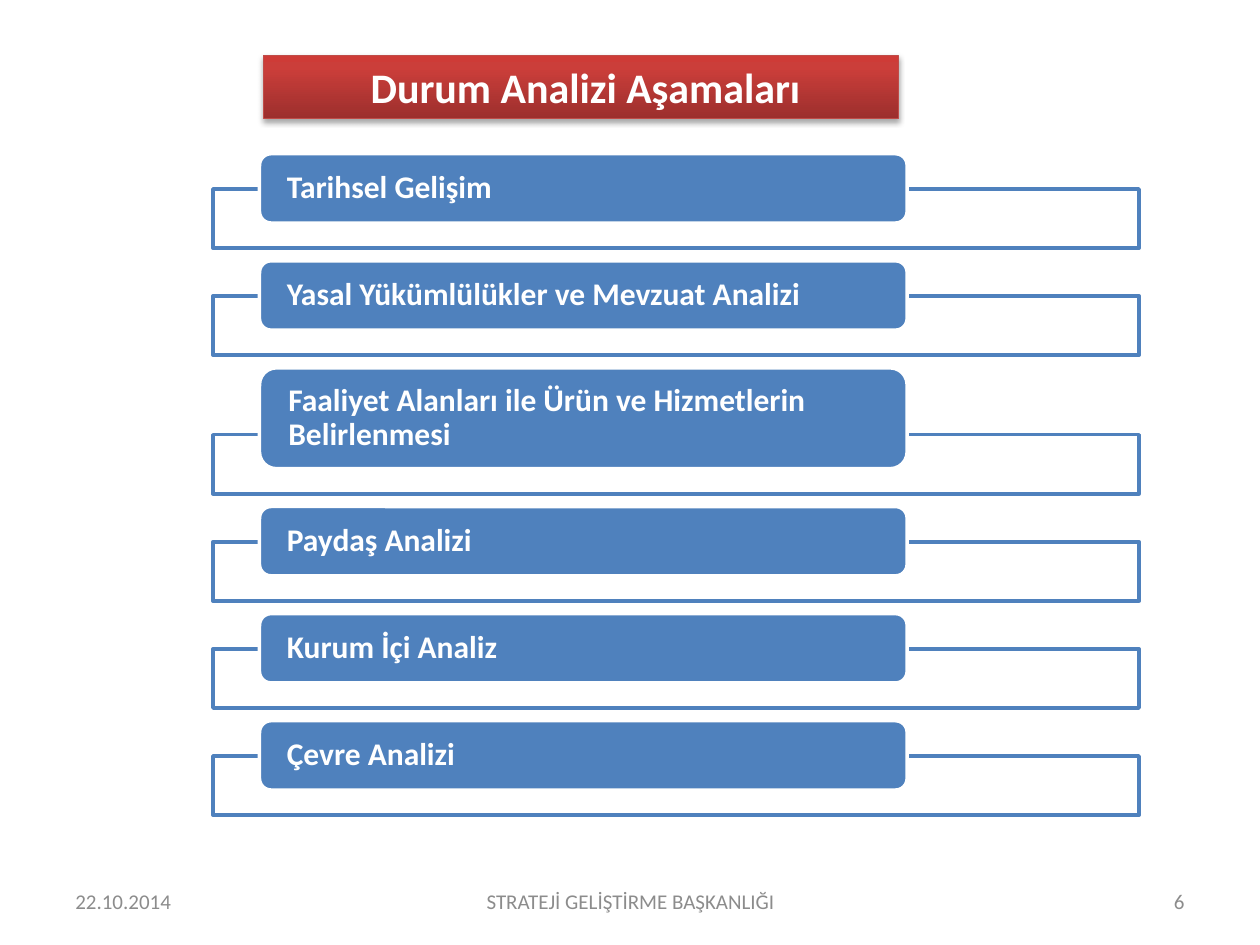
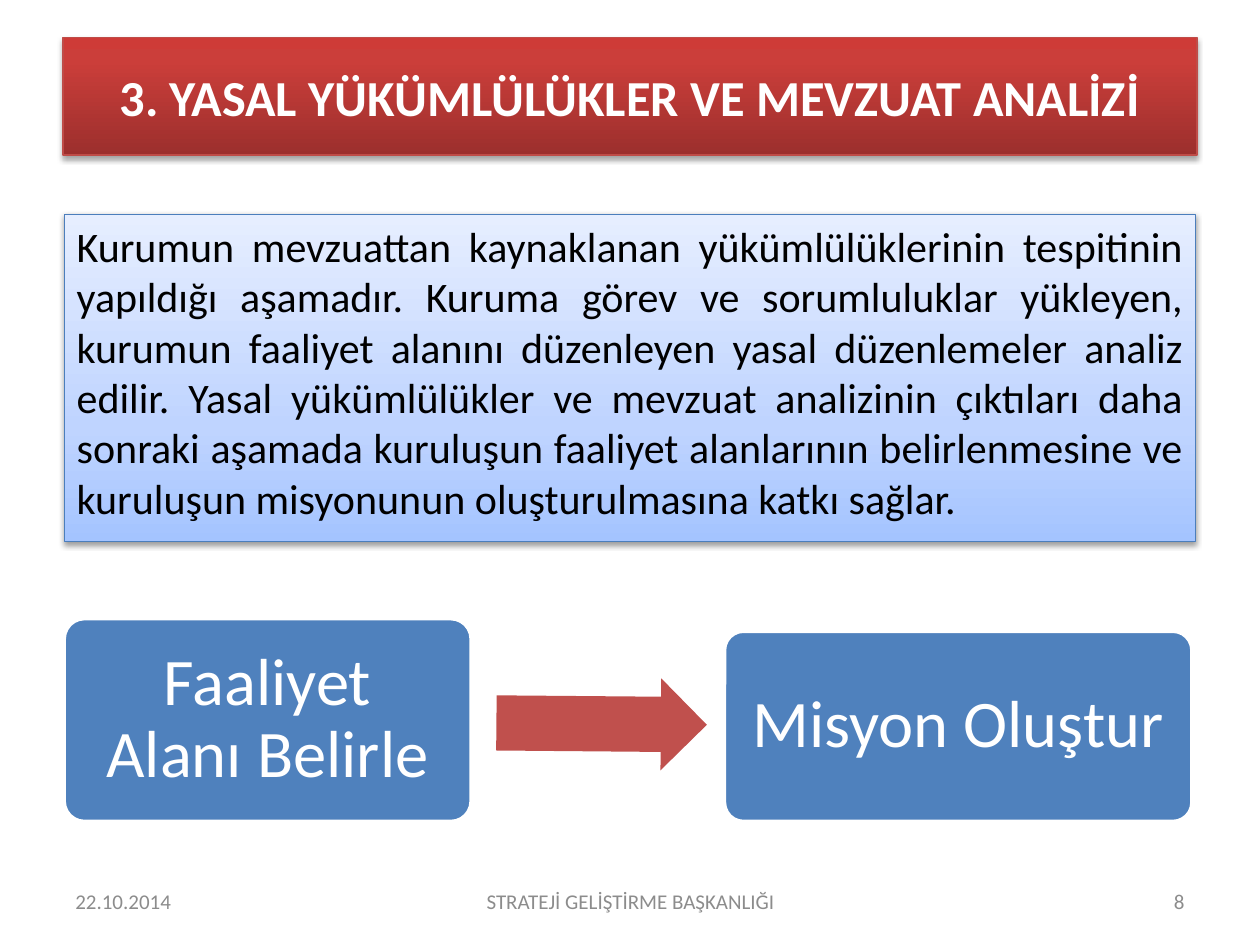
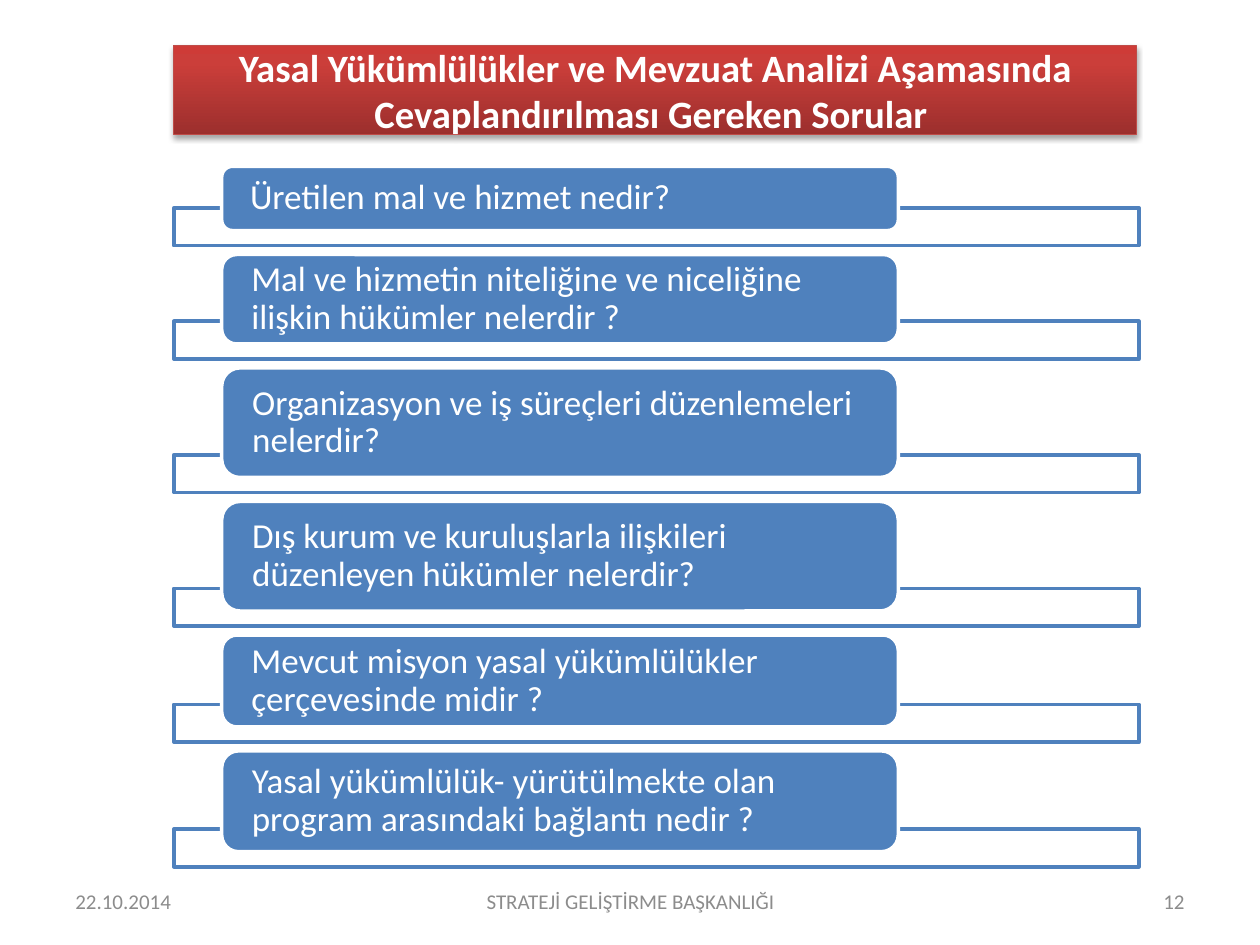
import pptx
import pptx.util
import pptx.dml.color
import pptx.enum.shapes
import pptx.enum.text
import pptx.oxml.ns
import lxml.etree

Inches = pptx.util.Inches
Kind = pptx.enum.shapes.MSO_SHAPE
Align = pptx.enum.text.PP_ALIGN
Anchor = pptx.enum.text.MSO_ANCHOR
qn = pptx.oxml.ns.qn

BLUE, RED, WHITE, BLACK, GRAY = "4F81BD", "C0504D", "FFFFFF", "000000", "8C8C8C"
BAND = [(0, "9C2F2D"), (80, "CB3E3A"), (100, "CE3B37")]
PANEL = [(0, "A4C4FF"), (35, "BFD4FF"), (100, "E6EEFF")]
DATE = "22.10.2014"
OFFICE = "STRATEJİ GELİŞTİRME BAŞKANLIĞI"


def color(code):
    return pptx.dml.color.RGBColor.from_string(code)


def child(parent, tag, **attrs):
    return lxml.etree.SubElement(parent, qn(tag), {k: str(v) for k, v in attrs.items()})


class Deck:
    font = "Calibri"

    def __init__(self):
        self.show = pptx.Presentation()
        self.show.slide_width = Inches(10)
        self.show.slide_height = Inches(7.5)

    def start(self, number):
        self.slide = self.show.slides.add_slide(self.show.slide_layouts[6])
        self.label(DATE, 0.5, 2.33, Align.LEFT)
        self.label(OFFICE, 3.42, 3.17, Align.CENTER)
        self.label(str(number), 7.17, 2.33, Align.RIGHT)

    def letter(self, shape, text, size, code=WHITE, bold=False, align=Align.LEFT,
               anchor=Anchor.MIDDLE, inset=(0.1, 0.05), space=1.0):
        frame = shape.text_frame
        frame.text = text
        frame.word_wrap = True
        frame.vertical_anchor = anchor
        frame.margin_left = frame.margin_right = Inches(inset[0])
        frame.margin_top = frame.margin_bottom = Inches(inset[1])
        para = frame.paragraphs[0]
        para.alignment = align
        para.line_spacing = space
        font = para.runs[0].font
        font.name = self.font
        font.size = pptx.util.Pt(size)
        font.bold = bold
        font.color.rgb = color(code)

    def label(self, text, left, width, align):
        box = self.slide.shapes.add_textbox(
            Inches(left), Inches(6.95), Inches(width), Inches(0.4))
        self.letter(box, text, 12, GRAY, align=align)

    def shape(self, kind, at, fill=None, line=None, width=2):
        item = self.slide.shapes.add_shape(kind, *map(Inches, at))
        item.shadow.inherit = False
        if fill:
            item.fill.solid()
            item.fill.fore_color.rgb = color(fill)
        if line:
            item.line.color.rgb = color(line)
            item.line.width = pptx.util.Pt(width)
        else:
            item.line.fill.background()
        return item

    def glow(self, at, stops, line, alpha, drop):
        item = self.shape(Kind.RECTANGLE, at, line=line, width=0.75)
        item.fill.gradient()
        item.fill.gradient_angle = 90
        props = item.element.spPr
        ramp = props.find(".//" + qn("a:gsLst"))
        ramp.clear()
        for place, code in stops:
            child(child(ramp, "a:gs", pos=place * 1000), "a:srgbClr", val=code)
        shade = child(props.find(qn("a:effectLst")), "a:outerShdw",
                      blurRad=pptx.util.Pt(3.1), dist=pptx.util.Pt(drop),
                      dir=5400000, rotWithShape=0)
        child(child(shade, "a:srgbClr", val=BLACK), "a:alpha", val=alpha * 1000)
        return item

    def title(self, text, at, size):
        band = self.glow(at, BAND, "BF4C48", 35, 1.8)
        self.letter(band, text, size, bold=True, align=Align.CENTER)

    def panel(self, text, at):
        box = self.glow(at, PANEL, "4B7EBC", 38, 1.6)
        self.letter(box, text, 24, BLACK, align=Align.JUSTIFY, anchor=Anchor.TOP)

    def tab(self, text, at, size, inset, bold=False, align=Align.LEFT, curve=None):
        item = self.shape(Kind.ROUNDED_RECTANGLE, at, BLUE, WHITE)
        if curve:
            item.adjustments[0] = curve
        self.letter(item, text, size, bold=bold, align=align, inset=inset, space=0.9)

    def bar(self, at):
        item = self.shape(Kind.RECTANGLE, at, WHITE, BLUE)
        tint = item.element.spPr.find(qn("a:solidFill"))[0]
        child(tint, "a:alpha", val=90000)

    def stack(self, rows, top, tab, bar, lap, gap, size, inset, bold=False):
        left, width = tab
        start, span, depth = bar
        for text, height in rows:
            edge = top + height - lap
            self.bar((start, edge, span, depth))
            self.tab(text, (left, top, width, height), size, (inset, 0), bold)
            top = edge + depth + gap

    def arrow(self, at, turn):
        item = self.shape(Kind.RIGHT_ARROW, at, RED)
        item.adjustments[0] = 0.6
        item.adjustments[1] = 0.5
        item.rotation = turn


def main():
    deck = Deck()

    deck.start(6)
    steps = [
        ("Tarihsel Gelişim", 0.55),
        ("Yasal Yükümlülükler ve Mevzuat Analizi", 0.55),
        ("Faaliyet Alanları ile Ürün ve Hizmetlerin Belirlenmesi", 0.8),
        ("Paydaş Analizi", 0.55),
        ("Kurum İçi Analiz", 0.55),
        ("Çevre Analizi", 0.55),
    ]
    deck.stack(steps, 1.22, (2.06, 5.14), (1.69, 7.35, 0.47),
               lap=0.27, gap=0.1, size=18, inset=0.19, bold=True)
    deck.title(" Durum Analizi Aşamaları", (2.09, 0.44, 5.04, 0.5), 24)

    deck.start(8)
    deck.title("3. YASAL YÜKÜMLÜLÜKLER VE MEVZUAT ANALİZİ", (0.5, 0.3, 9, 0.93), 28.8)
    deck.panel(
        "Kurumun mevzuattan kaynaklanan yükümlülüklerinin tespitinin yapıldığı "
        "aşamadır. Kuruma görev ve sorumluluklar yükleyen, kurumun faaliyet alanını "
        "düzenleyen yasal düzenlemeler analiz edilir. Yasal yükümlülükler ve mevzuat "
        "analizinin çıktıları daha sonraki aşamada kuruluşun faaliyet alanlarının "
        "belirlenmesine ve kuruluşun misyonunun oluşturulmasına katkı sağlar.",
        (0.51, 1.7, 8.98, 2.6))
    goals = [
        ("Faaliyet Alanı Belirle", (0.51, 4.91, 3.23, 1.61)),
        ("Misyon Oluştur", (5.75, 5.01, 3.71, 1.51)),
    ]
    for text, at in goals:
        deck.tab(text, at, 38, (0.16, 0.16), align=Align.CENTER, curve=0.1)
    deck.arrow((3.94, 5.38, 1.67, 0.73), 0.5)

    deck.start(12)
    asks = [
        ("Üretilen mal ve hizmet nedir?", 0.51),
        ("Mal ve hizmetin niteliğine ve niceliğine ilişkin hükümler nelerdir ?", 0.71),
        ("Organizasyon ve iş süreçleri düzenlemeleri nelerdir?", 0.87),
        ("Dış kurum ve kuruluşlarla ilişkileri düzenleyen hükümler nelerdir?", 0.87),
        ("Mevcut misyon yasal yükümlülükler çerçevesinde midir ?", 0.73),
        ("Yasal yükümlülük- yürütülmekte olan program arasındaki bağlantı nedir ?", 0.8),
    ]
    deck.stack(asks, 1.32, (1.76, 5.37), (1.38, 7.66, 0.3),
               lap=0.18, gap=0.07, size=20, inset=0.2)
    deck.title("Yasal Yükümlülükler ve Mevzuat Analizi Aşamasında "
               "Cevaplandırılması Gereken Sorular ", (1.38, 0.36, 7.64, 0.71), 22.1)

    deck.show.save("out.pptx")


if __name__ == "__main__":
    main()
